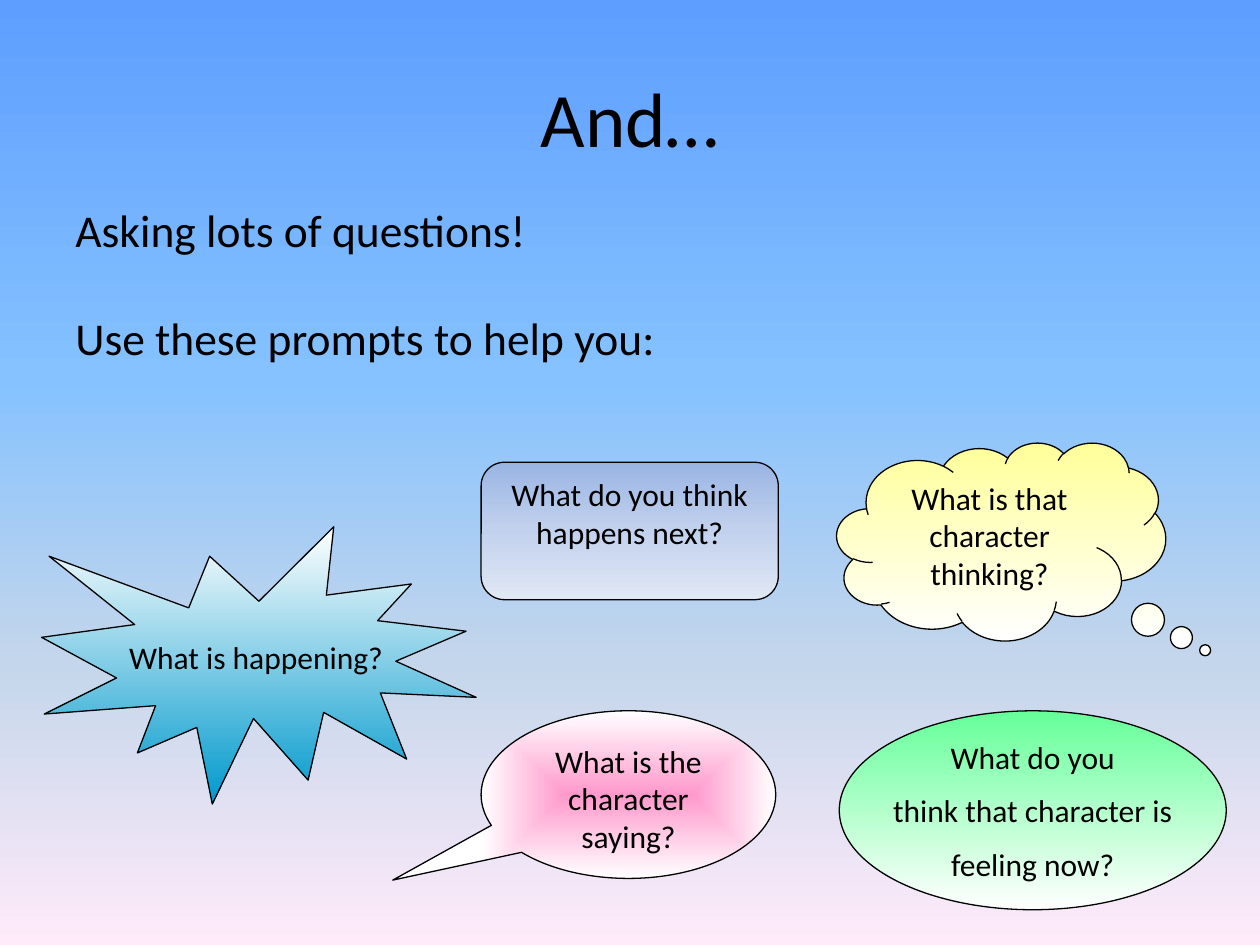
from dataclasses import dataclass

from lxml.etree import SubElement
from pptx import Presentation
from pptx.dml.color import RGBColor
from pptx.enum.shapes import MSO_SHAPE as Preset
from pptx.enum.text import MSO_ANCHOR as Anchor, PP_ALIGN as Align
from pptx.oxml.ns import qn
from pptx.util import Cm, Pt

FONT = "Calibri"
COLORS = {
    "ink": "000000",
    "white": "FFFFFF",
    "sky": "5E9EFF",
    "light sky": "85C2FF",
    "haze": "C4D6EB",
    "blush": "FFEBFA",
    "teal": "0099CC",
    "blue": "9AB5E4",
    "mid blue": "C2D1ED",
    "pale blue": "E1E8F5",
    "pink": "FF99CC",
    "yellow": "FFFF99",
    "green": "66FF99",
}
BACKDROP = ((0, "sky"), (40, "light sky"), (70, "haze"), (100, "blush"))


@dataclass(frozen=True)
class Prompt:
    preset: Preset
    box: tuple[float, float, float, float]
    stops: tuple[tuple[int, str], ...]
    lines: tuple[str, ...]
    adjustments: tuple[float, ...] = ()
    anchor: Anchor = Anchor.TOP
    wrap: bool = False
    space_before: float = 0
    from_center: bool = False


PROMPTS = (
    Prompt(Preset.EXPLOSION1, (0.84, 10.62, 8.76, 5.59),
           ((0, "white"), (100, "teal")),
           ("What is happening?",), anchor=Anchor.MIDDLE),
    Prompt(Preset.ROUNDED_RECTANGLE, (9.7, 9.32, 5.99, 2.77),
           ((0, "blue"), (50, "mid blue"), (100, "pale blue")),
           ("What do you think", "happens next?"), adjustments=(0.17,)),
    Prompt(Preset.OVAL_CALLOUT, (9.7, 14.33, 5.94, 3.38),
           ((0, "pink"), (100, "white")),
           ("What is the character saying?",),
           adjustments=(-0.8, 0.51), wrap=True, from_center=True),
    Prompt(Preset.CLOUD_CALLOUT, (16.87, 8.92, 6.63, 3.99),
           ((0, "yellow"), (100, "white")),
           ("What is that character thinking?",),
           adjustments=(0.62, 0.55), wrap=True),
    Prompt(Preset.OVAL, (16.92, 14.33, 7.8, 4.01),
           ((0, "green"), (100, "white")),
           ("What do you", "think that character is", "feeling now?"),
           anchor=Anchor.MIDDLE, space_before=9),
)


def paint_gradient(owner, fill, stops, from_center: bool = False) -> None:
    """Fill with color stops, running downward or outward from the center."""
    fill.gradient()
    gradient = owner.element.find(".//" + qn("a:gradFill"))
    for child in list(gradient):
        gradient.remove(child)
    stop_list = SubElement(gradient, qn("a:gsLst"))
    for percent, color in stops:
        stop = SubElement(stop_list, qn("a:gs"), pos=str(percent * 1000))
        SubElement(stop, qn("a:srgbClr"), val=COLORS[color])
    if from_center:
        rect = SubElement(gradient, qn("a:path"), {"path": "rect"})
        SubElement(rect, qn("a:fillToRect"), l="50000", t="50000", r="50000", b="50000")
    else:
        SubElement(gradient, qn("a:lin"), ang="5400000", scaled="1")


def write_text(frame, lines, *, size: float, align=Align.CENTER, anchor=Anchor.TOP,
               wrap: bool = True, space_before: float = 0) -> None:
    frame.word_wrap = wrap
    frame.vertical_anchor = anchor
    for index, line in enumerate(lines):
        paragraph = frame.add_paragraph() if index else frame.paragraphs[0]
        paragraph.alignment = align
        paragraph.space_before = Pt(space_before if index else 0)
        run = paragraph.add_run()
        run.text = line
        run.font.name = FONT
        run.font.size = Pt(size)
        run.font.color.rgb = RGBColor.from_string(COLORS["ink"])


def draw_prompt(slide, prompt: Prompt) -> None:
    bubble = slide.shapes.add_shape(prompt.preset, *map(Cm, prompt.box))
    bubble.shadow.inherit = False
    for index, value in enumerate(prompt.adjustments):
        bubble.adjustments[index] = value
    paint_gradient(bubble, bubble.fill, prompt.stops, prompt.from_center)
    bubble.line.color.rgb = RGBColor.from_string(COLORS["ink"])
    bubble.line.width = Pt(0.75)
    write_text(bubble.text_frame, prompt.lines, size=18, anchor=prompt.anchor,
               wrap=prompt.wrap, space_before=prompt.space_before)


def main() -> None:
    deck = Presentation()
    deck.slide_width, deck.slide_height = Cm(25.4), Cm(19.05)
    slide = deck.slides.add_slide(deck.slide_layouts[5])
    paint_gradient(slide, slide.background.fill, BACKDROP)

    heading = slide.shapes.title
    heading.left, heading.top, heading.width, heading.height = map(
        Cm, (1.27, 0.76, 22.86, 3.18))
    write_text(heading.text_frame, ("And…",), size=44, anchor=Anchor.MIDDLE)

    advice = slide.shapes.add_textbox(*map(Cm, (1.27, 3.94, 17.78, 3.58)))
    write_text(advice.text_frame,
               ("Asking lots of questions!", "Use these prompts to help you:"),
               size=26, align=Align.LEFT, space_before=31)

    for prompt in PROMPTS:
        draw_prompt(slide, prompt)
    deck.save("out.pptx")


if __name__ == "__main__":
    main()
